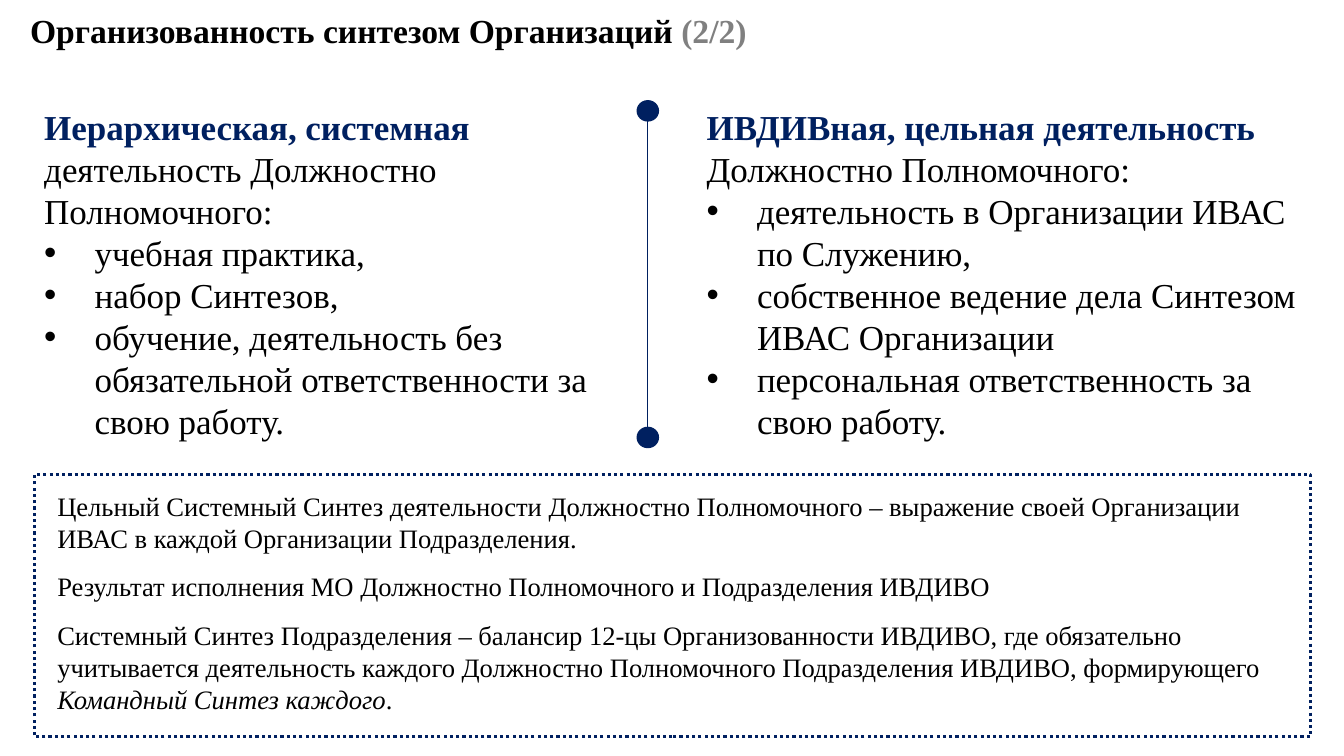
"""Build a slide comparing two kinds of activity, with a summary box below."""
from dataclasses import dataclass

from lxml import etree
from pptx import Presentation
from pptx.dml.color import RGBColor
from pptx.enum.dml import MSO_LINE
from pptx.enum.shapes import MSO_CONNECTOR, MSO_SHAPE
from pptx.oxml.ns import qn
from pptx.util import Inches, Pt

DOTS = MSO_LINE.ROUND_DOT
LINE = MSO_CONNECTOR.STRAIGHT
OVAL = MSO_SHAPE.OVAL
RECT = MSO_SHAPE.RECTANGLE


@dataclass(frozen=True)
class Theme:
    font: str = "Times New Roman"
    navy: RGBColor = RGBColor(0x00, 0x20, 0x60)
    black: RGBColor = RGBColor(0x00, 0x00, 0x00)
    gray: RGBColor = RGBColor(0x80, 0x80, 0x80)
    title: int = 24
    body: int = 25
    note: int = 19
    gap: int = 12


theme = Theme()


def add_text(left, top, width, height, size, paras, gap=0):
    box = slide.shapes.add_textbox(
        Inches(left), Inches(top), Inches(width), Inches(height))
    frame = box.text_frame
    frame.word_wrap = True
    for index, (bullet, runs) in enumerate(paras):
        para = frame.paragraphs[0] if index == 0 else frame.add_paragraph()
        if bullet:
            props = para._p.get_or_add_pPr()
            props.set("marL", str(Inches(0.5)))
            props.set("indent", str(Inches(-0.5)))
            etree.SubElement(props, qn("a:buFont")).set("typeface", "Arial")
            etree.SubElement(props, qn("a:buChar")).set("char", "•")
        if index and gap:
            para.space_before = Pt(gap)
        for text, color, bold, italic in runs:
            run = para.add_run()
            run.text = text
            font = run.font
            font.name = theme.font
            font.size = Pt(size)
            font.color.rgb = color
            font.bold = bold
            font.italic = italic


def plain(text):
    return text, theme.black, False, False


deck = Presentation()
deck.slide_width = Inches(13.33)
deck.slide_height = Inches(7.5)
slide = deck.slides.add_slide(deck.slide_layouts[6])

add_text(0.2, 0.05, 13.13, 0.5, theme.title, [
    (False, [("Организованность синтезом Организаций ", theme.black, True, False),
             ("(2/2)", theme.gray, True, False)]),
])

columns = [
    (0.34, "Иерархическая, системная ",
     ["деятельность Должностно", "Полномочного:"],
     ["учебная практика,",
      "набор Синтезов,",
      "обучение, деятельность без обязательной ответственности за свою работу."]),
    (6.91, "ИВДИВная, цельная деятельность ",
     ["Должностно Полномочного:"],
     ["деятельность в Организации ИВАС по Служению,",
      "собственное ведение дела Синтезом ИВАС Организации",
      "персональная ответственность за свою работу."]),
]
for left, head, intro, items in columns:
    paras = [(False, [(head, theme.navy, True, False), plain(intro[0])])]
    paras += [(False, [plain(text)]) for text in intro[1:]]
    paras += [(True, [plain(text)]) for text in items]
    add_text(left, 1, 6.08, 3.47, theme.body, paras)

rule = slide.shapes.add_connector(
    LINE, Inches(6.42), Inches(1.09), Inches(6.42), Inches(4.31))
rule.line.color.rgb = theme.navy
rule.line.width = Pt(0.5)
etree.SubElement(rule._element.spPr, qn("a:effectLst"))

for top in (1, 4.24):
    dot = slide.shapes.add_shape(
        OVAL, Inches(6.32), Inches(top), Inches(0.21), Inches(0.2))
    dot.shadow.inherit = False
    dot.fill.solid()
    dot.fill.fore_color.rgb = theme.navy
    dot.line.color.rgb = theme.navy
    dot.line.width = Pt(1)

add_text(0.47, 4.81, 12.53, 2.36, theme.note, [
    (False, [plain("Цельный Системный Синтез деятельности Должностно Полномочного "
                   "– выражение своей Организации ИВАС в каждой Организации "
                   "Подразделения.")]),
    (False, [plain("Результат исполнения МО Должностно Полномочного "
                   "и Подразделения ИВДИВО")]),
    (False, [plain("Системный Синтез Подразделения – балансир 12-цы "
                   "Организованности ИВДИВО, где обязательно учитывается "
                   "деятельность каждого Должностно Полномочного Подразделения "
                   "ИВДИВО, формирующего "),
             ("Командный Синтез каждого", theme.black, False, True),
             plain(".")]),
], theme.gap)

frame = slide.shapes.add_shape(
    RECT, Inches(0.34), Inches(4.71), Inches(12.66), Inches(2.6))
frame.shadow.inherit = False
frame.fill.background()
frame.line.color.rgb = theme.navy
frame.line.width = Pt(2.25)
frame.line.dash_style = DOTS

deck.save("out.pptx")
